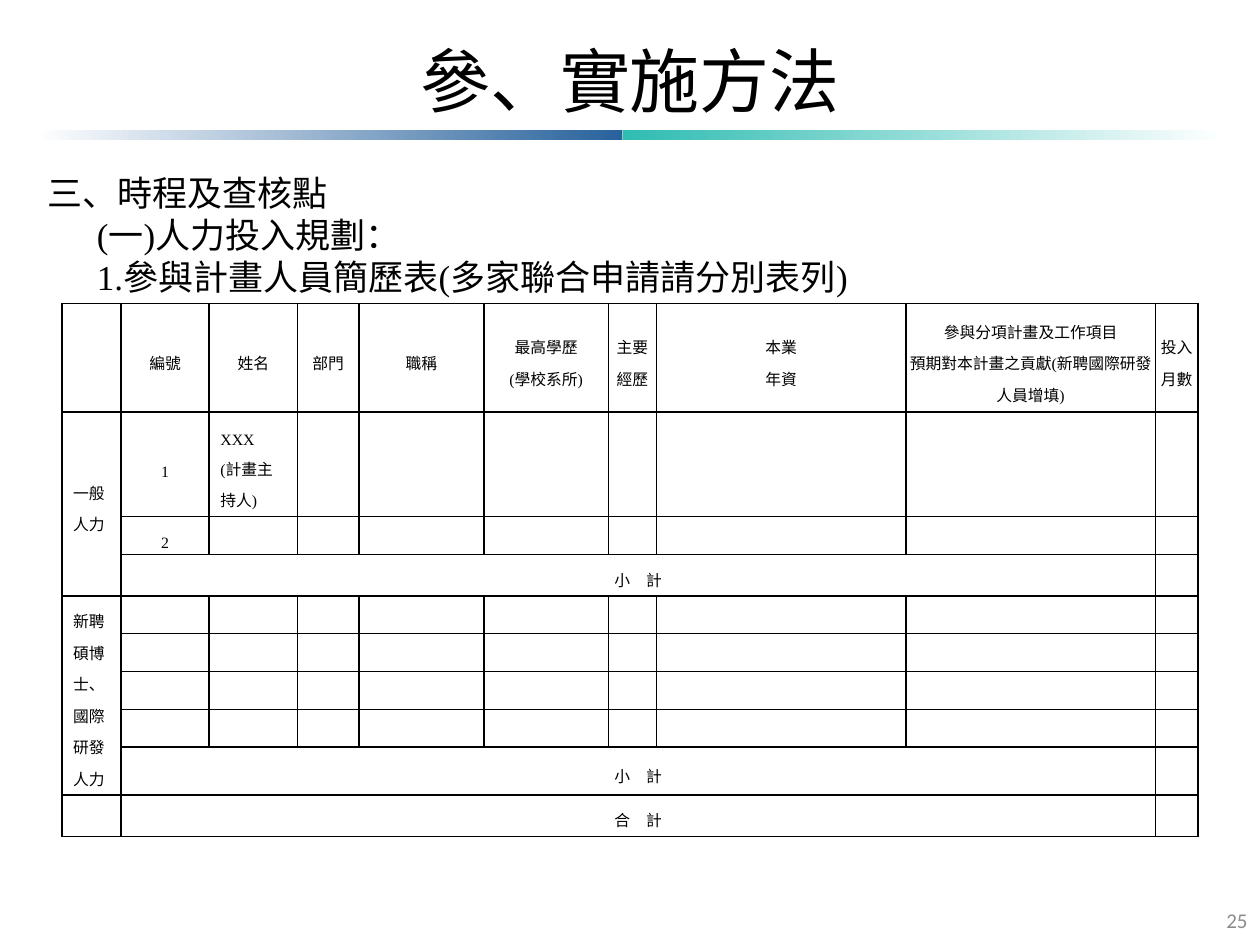
from lxml.etree import SubElement
from pptx import Presentation
from pptx.dml.color import RGBColor
from pptx.enum.shapes import MSO_SHAPE
from pptx.enum.text import MSO_ANCHOR, PP_ALIGN
from pptx.oxml import parse_xml
from pptx.oxml.ns import nsdecls, qn
from pptx.util import Inches, Pt

BLACK = RGBColor(0x00, 0x00, 0x00)
WHITE = RGBColor(0xFF, 0xFF, 0xFF)
BLUE = RGBColor(0x28, 0x62, 0x9C)
TEAL = RGBColor(0x2F, 0xBC, 0xB2)
GRAY = RGBColor(0x8C, 0x8C, 0x8C)
SERIF, SANS = "Times New Roman", "Calibri"
TIGHT = (0.01, 0.01, 0.01, 0)
ROOMY = (0.09, 0.04, 0.09, 0.04)


class SlideBuilder:
    """Holds the text style and the current slide."""

    def __init__(self, slide):
        self.s = slide
        self.font, self.color = SERIF, BLACK

    def add_lines(self, tf, lines, size, align, font=None, color=None):
        for i, line in enumerate(lines):
            p = tf.paragraphs[0] if i == 0 else tf.add_paragraph()
            p.alignment = align
            r = p.add_run()
            r.text = line
            r.font.size = Pt(size)
            r.font.name = font or self.font
            r.font.color.rgb = color or self.color

    def text(self, box, lines, size, align, anchor=MSO_ANCHOR.TOP, **style):
        tf = self.s.shapes.add_textbox(*map(Inches, box)).text_frame
        tf.word_wrap = True
        tf.vertical_anchor = anchor
        self.add_lines(tf, lines, size, align, **style)
        return tf

    def gradient_bar(self, box, start, end):
        sp = self.s.shapes.add_shape(MSO_SHAPE.RECTANGLE, *map(Inches, box))
        sp.shadow.inherit = False
        sp.line.fill.background()
        sp.fill.gradient()
        sp.fill.gradient_angle = 0
        for stop, color in zip(sp.fill.gradient_stops, (start, end)):
            stop.color.rgb = color

    def table(self, box, cols, rows):
        frame = self.s.shapes.add_table(len(rows), len(cols), *map(Inches, box))
        table = frame.table
        table.first_row = table.horz_banding = False
        for col, width in zip(table.columns, cols):
            col.width = Inches(width)
        for row, height in zip(table.rows, rows):
            row.height = Inches(height)
        for cell in table.iter_cells():
            self.border(cell)
            cell.fill.background()
            self.margins(cell, TIGHT)
            cell.text_frame.paragraphs[0].font.size = Pt(9)
        return table

    def border(self, cell):
        tc_pr = cell._tc.get_or_add_tcPr()
        for side in ("lnL", "lnR", "lnT", "lnB"):
            ln = parse_xml(f'<a:{side} {nsdecls("a")} w="{Pt(1)}"/>')
            fill = SubElement(ln, qn("a:solidFill"))
            SubElement(fill, qn("a:srgbClr"), val=str(BLACK))
            tc_pr.append(ln)

    def margins(self, cell, ins):
        (cell.margin_left, cell.margin_top,
         cell.margin_right, cell.margin_bottom) = map(Inches, ins)

    def cell(self, cell, lines, align=PP_ALIGN.CENTER, ins=TIGHT,
             anchor=MSO_ANCHOR.MIDDLE):
        self.margins(cell, ins)
        cell.vertical_anchor = anchor
        self.add_lines(cell.text_frame, lines, 9, align)
        for p in cell.text_frame.paragraphs:
            p.line_spacing = Pt(18)


def main():
    prs = Presentation()
    prs.slide_width, prs.slide_height = Inches(10), Inches(7.5)
    b = SlideBuilder(prs.slides.add_slide(prs.slide_layouts[6]))

    # Title and divider
    b.gradient_bar((0.28, 1.03, 4.66, 0.08), WHITE, BLUE)
    b.gradient_bar((4.94, 1.03, 4.78, 0.08), TEAL, WHITE)
    b.text((0.5, 0.13, 9, 1.01), ["參、實施方法"], 40, PP_ALIGN.CENTER,
           MSO_ANCHOR.MIDDLE)

    # Section headings, the last two indented
    tf = b.text((0.28, 1.31, 9, 1.11),
                ["三、時程及查核點", "(一)人力投入規劃：",
                 "1.參與計畫人員簡歷表(多家聯合申請請分別表列)"],
                20, PP_ALIGN.JUSTIFY)
    for p in tf.paragraphs[1:]:
        p._p.get_or_add_pPr().set("marL", str(Inches(0.39)))

    # Staff table
    cols = [0.47, 0.7, 0.7, 0.49, 0.99, 0.99, 0.38, 1.98, 1.98, 0.34]
    rows = [0.86, 0.72] + [0.3] * 8
    table = b.table((0.49, 2.41, 9.01, 4.3), cols, rows)
    headers = [["編號"], ["姓名"], ["部門"], ["職稱"],
               ["最高學歷", "(學校系所)"], ["主要", "經歷"], ["本業", "年資"],
               ["參與分項計畫及工作項目",
                "預期對本計畫之貢獻(新聘國際研發人員增填)"],
               ["投入", "月數"]]
    for col, lines in enumerate(headers, 1):
        b.cell(table.cell(0, col), lines)

    # Staff groups: first row, last row, label
    for first, last, label in ((1, 3, "一般人力"),
                               (4, 8, "新聘碩博士、國際研發人力")):
        table.cell(first, 0).merge(table.cell(last, 0))
        b.cell(table.cell(first, 0), [label], PP_ALIGN.LEFT, ROOMY)

    # Numbered staff
    for row in (1, 2):
        b.cell(table.cell(row, 1), [str(row)])
    b.cell(table.cell(1, 2), ["XXX", "(計畫主持人)"], PP_ALIGN.LEFT, ROOMY,
           MSO_ANCHOR.TOP)

    # Subtotals and total
    for row, label in ((3, "小　計"), (8, "小　計"), (9, "合　計")):
        table.cell(row, 1).merge(table.cell(row, 8))
        b.cell(table.cell(row, 1), [label], ins=ROOMY)

    # Page number
    b.text((7.67, 7.1, 2.33, 0.4), ["25"], 12, PP_ALIGN.RIGHT,
           MSO_ANCHOR.MIDDLE, font=SANS, color=GRAY)

    prs.save("out.pptx")


if __name__ == "__main__":
    main()
